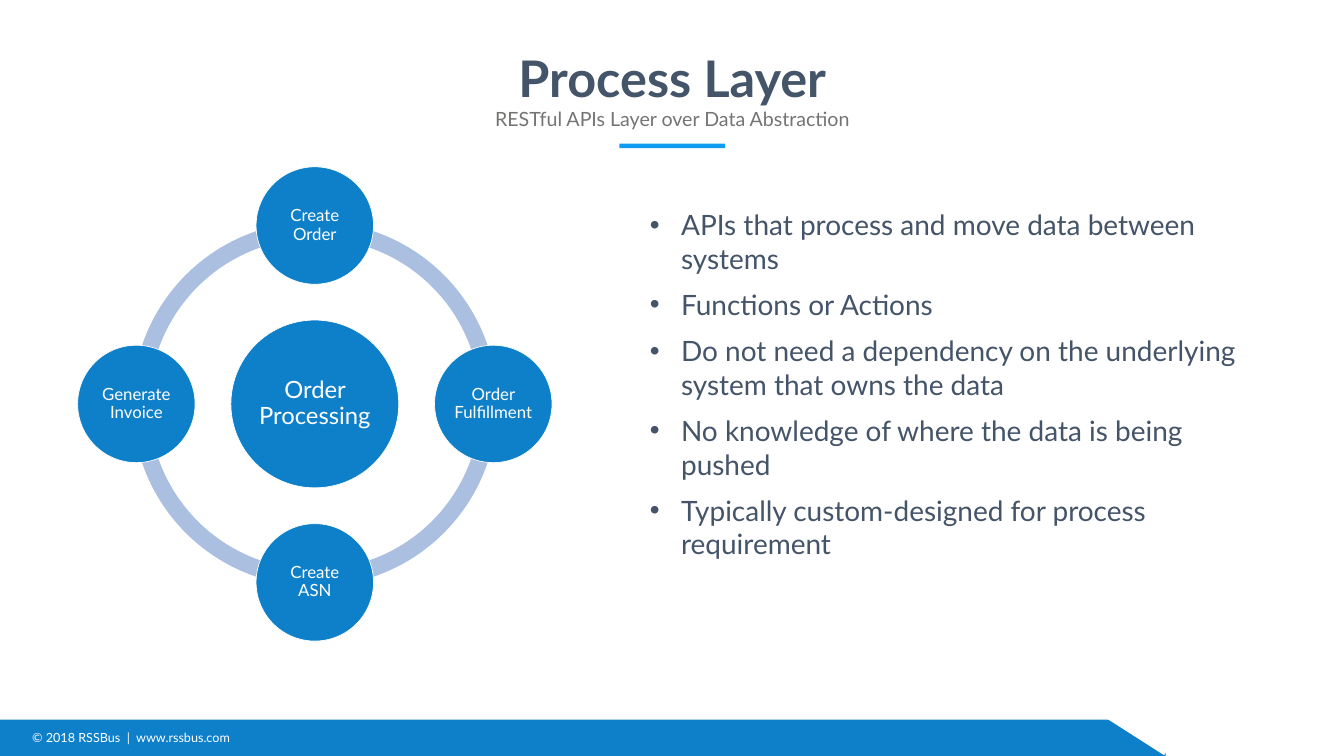
from math import cos, radians, sin

from lxml import etree
from pptx import Presentation
from pptx.dml.color import RGBColor
from pptx.enum.shapes import MSO_SHAPE
from pptx.enum.text import MSO_ANCHOR, PP_ALIGN
from pptx.oxml.ns import qn
from pptx.util import Inches, Pt

RECTANGLE, OVAL, ARC = MSO_SHAPE.RECTANGLE, MSO_SHAPE.OVAL, MSO_SHAPE.BLOCK_ARC
TOP, MIDDLE = MSO_ANCHOR.TOP, MSO_ANCHOR.MIDDLE
LEFT, CENTER = PP_ALIGN.LEFT, PP_ALIGN.CENTER

COLORS = {
    "blue": "0E80C9",
    "accent": "119CF4",
    "ring": "ABC0E1",
    "ink": "445469",
    "gray": "737572",
    "white": "FFFFFF",
}
STEPS = ["Create Order", "Order Fulfillment", "Create ASN", "Generate Invoice"]
POINTS = [
    "APIs that process and move data between systems",
    "Functions or Actions",
    "Do not need a dependency on the underlying system that owns the data",
    "No knowledge of where the data is being pushed",
    "Typically custom-designed for process requirement",
]


def rgb(name):
    """Return the palette colour with this name."""
    return RGBColor.from_string(COLORS[name])


def set_frame(shape, inset=0, anchor=MIDDLE, wrap=True):
    """Set the margins, anchor and wrapping of a shape and return its frame."""
    frame = shape.text_frame
    margin = Inches(inset)
    formats = {
        "margin_left": margin, "margin_top": margin,
        "margin_right": margin, "margin_bottom": margin,
        "vertical_anchor": anchor, "word_wrap": wrap,
    }
    for name, value in formats.items():
        setattr(frame, name, value)
    return frame


def write(para, text, size, color, align=LEFT, bold=False):
    """Write one formatted run into a paragraph."""
    para.alignment = align
    span = para.add_run()
    span.text = text
    formats = {"name": "Lato", "size": Pt(size), "bold": bold}
    for name, value in formats.items():
        setattr(span.font, name, value)
    span.font.color.rgb = rgb(color)


def add_text(page, box, text, size, color, inset=0, anchor=MIDDLE,
             wrap=True, align=LEFT, bold=False):
    """Add a text box holding one line of text."""
    label = page.shapes.add_textbox(*map(Inches, box))
    frame = set_frame(label, inset, anchor, wrap)
    write(frame.paragraphs[0], text, size, color, align, bold)


def add_block(page, kind, box, color):
    """Add a plain filled shape without outline."""
    shape = page.shapes.add_shape(kind, *map(Inches, box))
    shape.shadow.inherit = False
    shape.fill.solid()
    shape.fill.fore_color.rgb = rgb(color)
    shape.line.fill.background()
    return shape


def add_circle(page, center_x, center_y, diameter, text, size, inset):
    """Add a labelled circle around a centre point."""
    box = (center_x - diameter / 2, center_y - diameter / 2, diameter, diameter)
    circle = add_block(page, OVAL, box, "blue")
    circle.line.color.rgb = rgb("white")
    circle.line.width = Pt(1)
    para = set_frame(circle, inset).paragraphs[0]
    para.line_spacing = 0.9
    write(para, text, size, "white", CENTER)


def add_footer(page, left, top, width, height):
    """Add the footer band with its slanted end and copyright line."""
    add_block(page, RECTANGLE, (left, top, width, height), "blue")
    add_text(page, (left + 0.54, top + 0.1, 8.2, 0.56),
             "© 2018 RSSBus  |  www.rssbus.com", 18, "white", 0.1, TOP)
    corner = (left + width - 1.24, top - 0.49, 1.56, 0.84)
    add_block(page, RECTANGLE, corner, "white").rotation = 32.6


def add_heading(page, left, top, width):
    """Add the title, subtitle and accent rule, centred in the width."""
    add_text(page, (left, top, width, 1.21), "Process Layer", 72, "ink",
             wrap=False, align=CENTER, bold=True)
    add_text(page, (left, top + 1.2, width, 0.47),
             "RESTful APIs Layer over Data Abstraction", 28, "gray",
             wrap=False, align=CENTER)
    rule = 2.1
    add_block(page, RECTANGLE,
              (left + (width - rule) / 2, top + 1.93, rule, 0.09), "accent")


def add_cycle(page, left, top, size):
    """Add a ring of steps around a central circle."""
    center_x, center_y = left + size / 2, top + size / 2
    ring, step = 7.24, 2.33
    ring_box = (center_x - ring / 2, center_y - ring / 2, ring, ring)
    quarter = 54
    for index in range(4):
        arc = add_block(page, ARC, ring_box, "ring")
        arc.adjustments[0] = index * quarter
        arc.adjustments[1] = (index + 1) % 4 * quarter
        arc.adjustments[2] = 0.046
    add_circle(page, center_x, center_y, 3.33, "Order Processing", 34, 0.05)
    orbit = (size - step) / 2
    for index, text in enumerate(STEPS):
        angle = radians(index * 360 / len(STEPS) - 90)
        add_circle(page, center_x + orbit * cos(angle),
                   center_y + orbit * sin(angle), step, text, 24, 0.03)


def add_points(page, left, top, width, height):
    """Add the bulleted list."""
    box = page.shapes.add_textbox(*map(Inches, (left, top, width, height)))
    frame = set_frame(box, anchor=TOP)
    for index, text in enumerate(POINTS):
        para = frame.add_paragraph() if index else frame.paragraphs[0]
        para.space_after = Pt(18)
        properties = para._p.get_or_add_pPr()
        properties.set("marL", str(Inches(0.62)))
        properties.set("indent", str(Inches(-0.62)))
        etree.SubElement(properties, qn("a:buFont")).set("typeface", "Arial")
        etree.SubElement(properties, qn("a:buChar")).set("char", "•")
        write(para, text, 40, "ink")


def main():
    """Build and save the slide."""
    deck = Presentation()
    deck.slide_width, deck.slide_height = Inches(26.66), Inches(15)
    page = deck.slides.add_slide(deck.slide_layouts[6])
    add_footer(page, 0, 14.28, 23.12, 0.72)
    add_heading(page, 9.78, 0.92, 7.11)
    add_points(page, 12.89, 4.12, 12.04, 8.28)
    add_cycle(page, 1.54, 3.31, 9.41)
    deck.save("out.pptx")


if __name__ == "__main__":
    main()
